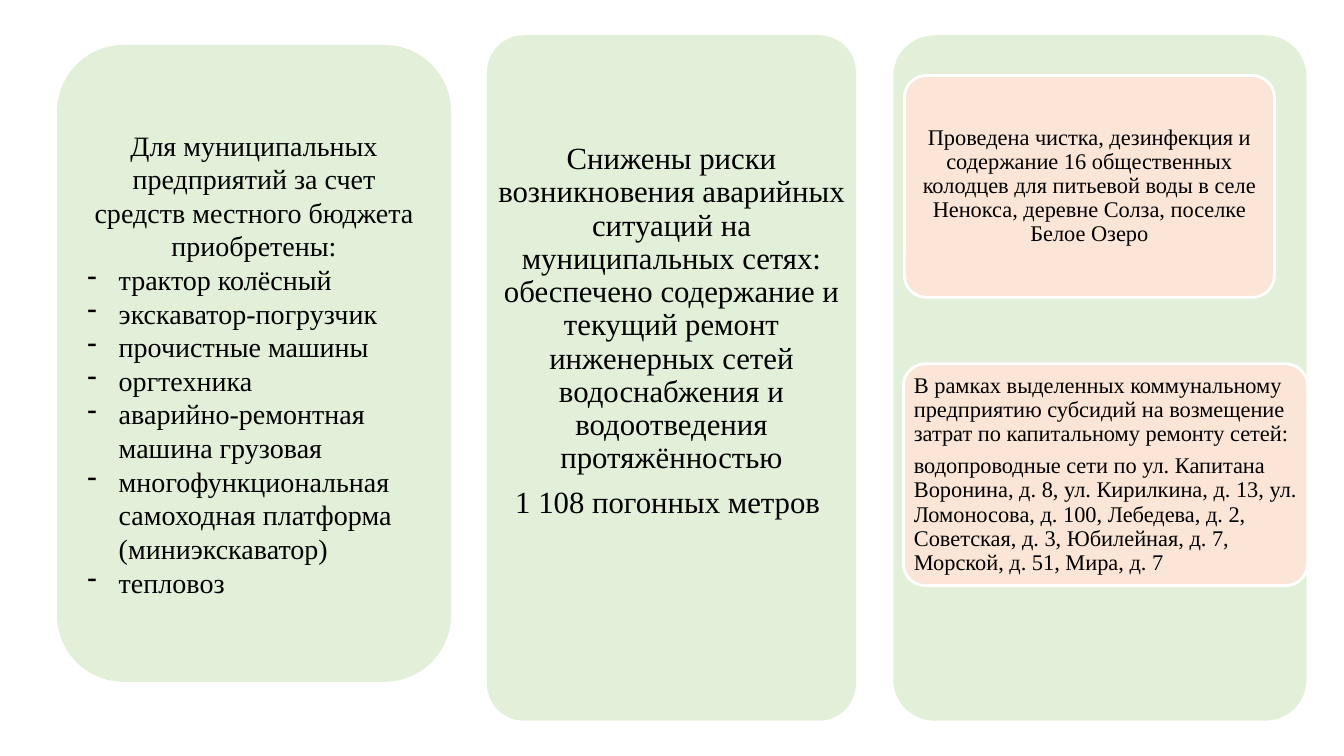
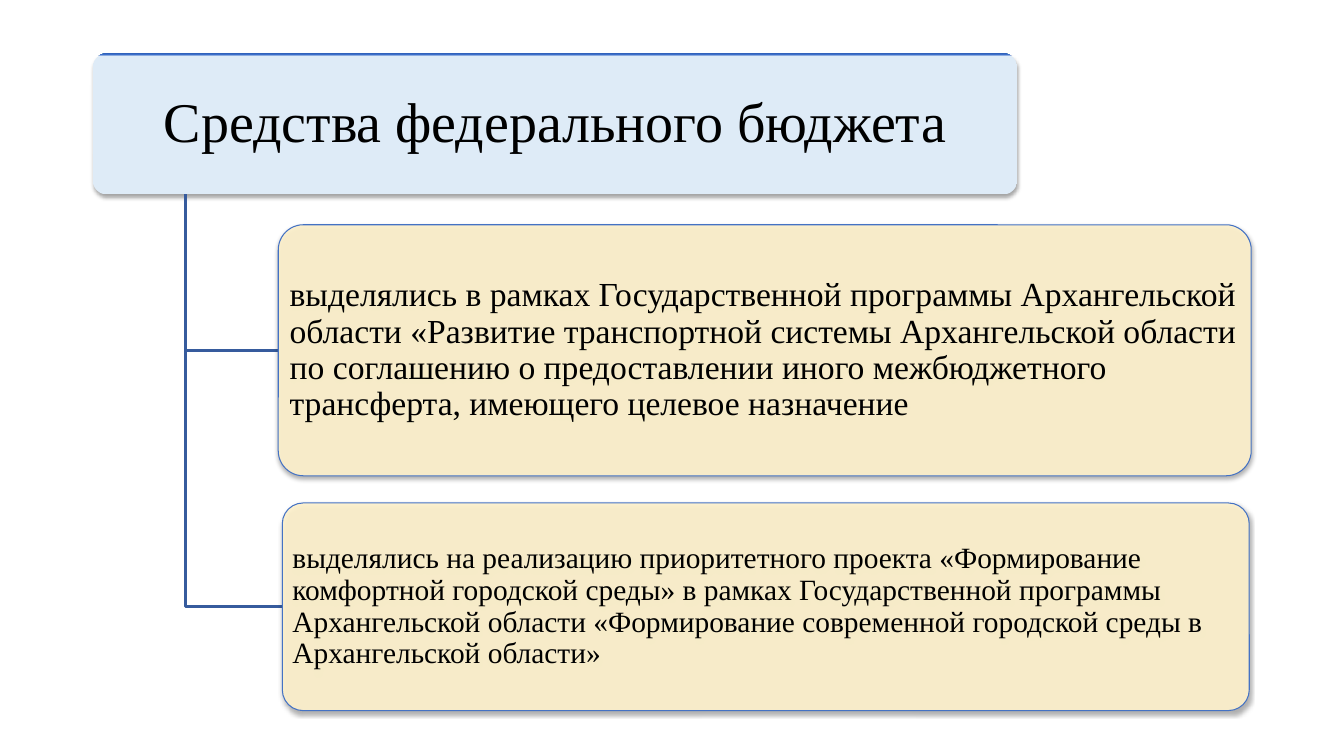
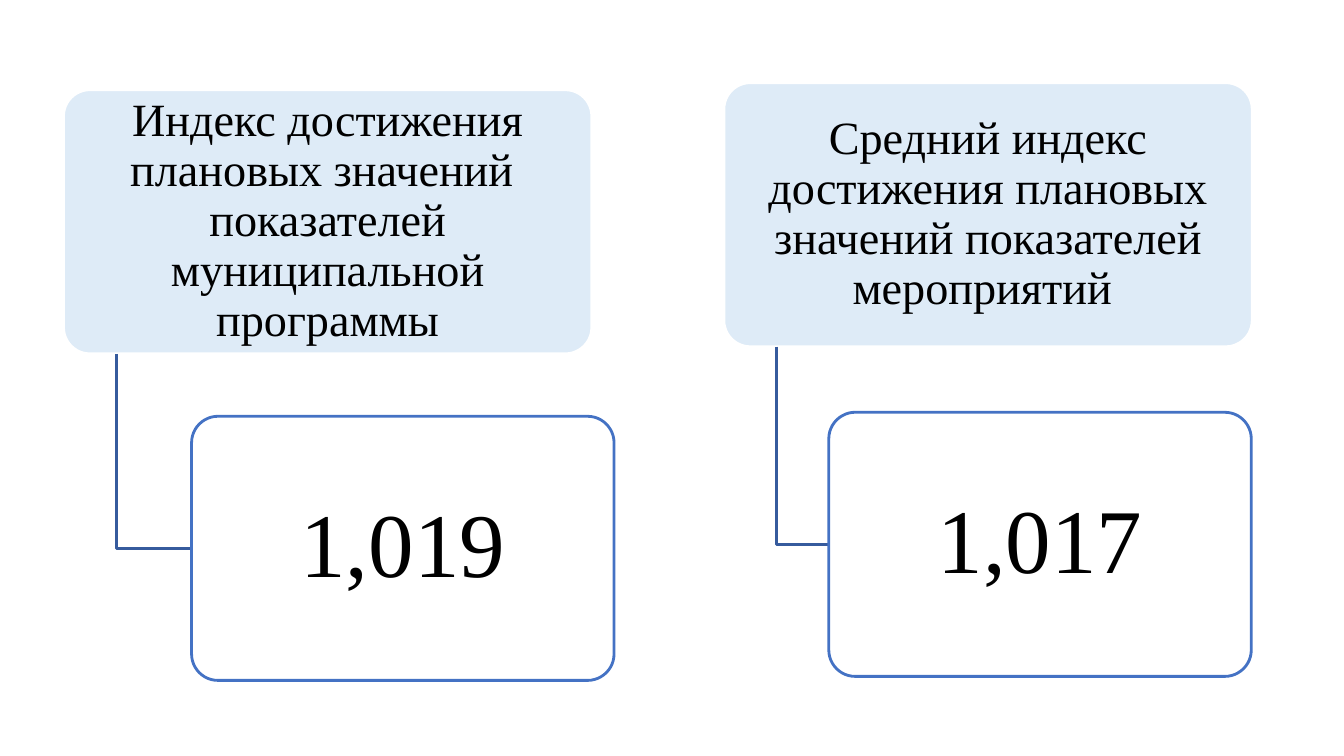
import copy

import pptx
import pptx.dml.color
import pptx.enum.shapes
import pptx.enum.text
import pptx.oxml
import pptx.oxml.ns
import pptx.util
from lxml import etree

PX = 9144  # one px is a hundredth of an inch
FONT = "Times New Roman"
GREEN, PEACH, SKY, CREAM = "E2F0D9", "FBE5D6", "DEEBF7", "FFF2CC"
BLUE, ELBOW, WHITE, BLACK = "4472C4", "365B9D", "FFFFFF", "000000"
LEFT, CENTER = pptx.enum.text.PP_ALIGN.LEFT, pptx.enum.text.PP_ALIGN.CENTER
TOP, MIDDLE = pptx.enum.text.MSO_ANCHOR.TOP, pptx.enum.text.MSO_ANCHOR.MIDDLE


# Basics
def px(*values):
    return [pptx.util.Emu(round(v * PX)) for v in values]


def rgb(value):
    return pptx.dml.color.RGBColor.from_string(value)


def sub(parent, tag, **attrs):
    return etree.SubElement(parent, pptx.oxml.ns.qn(tag), attrs)


def find(shape, tag):
    return shape._element.spPr.find(".//" + pptx.oxml.ns.qn(tag))


def write(shape, paragraphs, size, align=CENTER, inset=(10, 5), anchor=MIDDLE,
          spacing=0.9, after=0.35):
    """Fill a shape with paragraphs; after is a share of the text size."""
    tf = shape.text_frame
    tf.word_wrap = True
    tf.vertical_anchor = anchor
    tf.margin_left, tf.margin_top = px(*inset)
    tf.margin_right, tf.margin_bottom = px(*inset)
    tf.text = "\n".join(paragraphs)
    for i, p in enumerate(tf.paragraphs):
        p.alignment = align
        p.line_spacing = spacing
        p.space_after = pptx.util.Pt(after * size if i < len(paragraphs) - 1 else 0)
        for r in p.runs:
            r.font.name, r.font.size = FONT, pptx.util.Pt(size)
            r.font.color.rgb = rgb(BLACK)
    return tf


def rounded(s, box, fill, line=None, width=2, corner=0.1, alpha=None):
    sp = s.shapes.add_shape(pptx.enum.shapes.MSO_SHAPE.ROUNDED_RECTANGLE, *px(*box))
    sp.adjustments[0] = corner
    sp.shadow.inherit = False
    sp.fill.solid()
    sp.fill.fore_color.rgb = rgb(fill)
    if alpha:
        sub(find(sp, "a:srgbClr"), "a:alpha", val=str(alpha * 1000))
    if line:
        sp.line.color.rgb = rgb(line)
        sp.line.width = pptx.util.Pt(width)
    else:
        sp.line.fill.background()
    return sp


def add_shadow(sp):
    shadow = sub(find(sp, "a:effectLst"), "a:outerShdw", blurRad="40000",
                 dist="23000", dir="5400000", rotWithShape="0")
    sub(sub(shadow, "a:srgbClr", val=BLACK), "a:alpha", val="35000")


def add_top_edge(sp):
    """Shade the fill to blue in a thin strip along the top."""
    sp.fill.gradient()
    sp.fill.gradient_angle = 90
    stops = find(sp, "a:gsLst")
    stops.append(copy.deepcopy(stops[-1]))
    shades = [(0.98, SKY), (0.99, "3E70CA"), (1, "3062BB")]
    for stop, (position, colour) in zip(sp.fill.gradient_stops, shades):
        stop.position = position
        stop.color.rgb = rgb(colour)


# Columns of the first slide
def purchases_column(s, box, intro, items):
    sp = rounded(s, box, GREEN, GREEN, corner=0.16667)
    tf = write(sp, [intro] + items, 20, spacing=1, after=0)
    for p in tf.paragraphs[1:]:
        p.alignment = LEFT
        pPr = p._p.get_or_add_pPr()
        indent = 31 * PX
        pPr.set("marL", str(indent))
        pPr.set("indent", str(-indent))
        sub(pPr, "a:buChar", char="-")


def risks_column(s, box, paragraphs):
    x, y, w, h = box
    rounded(s, box, GREEN)
    tb = s.shapes.add_textbox(*px(x, y + 107, w, 380))
    write(tb, paragraphs, 22, inset=(10, 0), anchor=TOP)


def cards_column(s, box, cards):
    x, y, w, h = box
    rounded(s, box, GREEN)
    for (dx, dy, card_w), align, paragraphs in cards:
        card = rounded(s, (x + dx, y + dy, card_w, 220), PEACH, WHITE)
        write(card, paragraphs, 16, align, inset=(4, 3))


# Header with branches below it
def elbow(s, header, child):
    """Drop from a tenth of the header's width to the child's left side."""
    x, y = header[0] + header[2] / 10, header[1] + header[3]
    end_x, end_y = child[0], child[1] + child[3] / 2
    builder = s.shapes.build_freeform(*px(x, y))
    builder.add_line_segments([px(x, end_y), px(end_x, end_y)], close=False)
    sp = builder.convert_to_shape()
    sp.shadow.inherit = False
    sp.fill.background()
    sp.line.color.rgb = rgb(ELBOW)
    sp.line.width = pptx.util.Pt(2)


def funding_tree(s, header, title, branches):
    sp = rounded(s, header, SKY)
    add_top_edge(sp)
    add_shadow(sp)
    write(sp, [title], 40, inset=(8, 6))
    for box, size, text in branches:
        elbow(s, header, box)
        sp = rounded(s, box, CREAM, BLUE, 0.75, alpha=90)
        add_shadow(sp)
        write(sp, [text], size, LEFT, inset=(4, 3))


def index_tree(s, header, title, child, value):
    write(rounded(s, header, SKY, WHITE), [title], 33, inset=(7, 5))
    elbow(s, header, child)
    write(rounded(s, child, WHITE, BLUE, alpha=90), [value], 65, inset=(14, 9))


# Slides
def results_slide(s):
    purchases_column(
        s, (58, 46, 388, 629),
        "Для муниципальных предприятий за счет средств местного бюджета приобретены:",
        ["трактор колёсный", "экскаватор-погрузчик", "прочистные машины",
         "оргтехника", "аварийно-ремонтная машина грузовая",
         "многофункциональная самоходная платформа (миниэкскаватор)", "тепловоз"])
    risks_column(s, (483, 35, 366, 680), [
        "Снижены риски возникновения аварийных ситуаций на муниципальных сетях: "
        "обеспечено содержание и текущий ремонт инженерных сетей водоснабжения "
        "и водоотведения протяжённостью",
        "1 108 погонных метров "])
    cards_column(s, (886, 35, 410, 680), [
        ((11, 40, 367), CENTER, [
            "Проведена чистка, дезинфекция и содержание 16 общественных колодцев "
            "для питьевой воды в селе Ненокса, деревне Солза, поселке Белое Озеро"]),
        ((10, 326, 401), LEFT, [
            "В рамках выделенных коммунальному предприятию субсидий на возмещение затрат "
            "по капитальному ремонту сетей:",
            "водопроводные сети по ул. Капитана Воронина, д. 8, ул. Кирилкина, "
            "д. 13, ул. Ломоносова, д. 100, Лебедева, д. 2, Советская, д. 3, "
            "Юбилейная, д. 7, Морской, д. 51, Мира, д. 7"])])


def funding_slide(s):
    funding_tree(s, (92, 53, 917, 140), "Средства федерального бюджета", [
        ((276, 223, 965, 249), 24,
         "выделялись в рамках Государственной программы Архангельской области "
         "«Развитие транспортной системы Архангельской области по соглашению "
         "о предоставлении иного межбюджетного трансферта, имеющего целевое "
         "назначение"),
        ((280, 499, 959, 206), 21,
         "выделялись на реализацию приоритетного проекта «Формирование "
         "комфортной городской среды» в рамках Государственной программы "
         "Архангельской области «Формирование современной городской среды "
         "в Архангельской области»")])


def indices_slide(s):
    index_tree(s, (63, 89, 524, 262),
               "Индекс достижения плановых значений  показателей муниципальной программы",
               (190, 413, 419, 262), "1,019")
    index_tree(s, (718, 82, 524, 262),
               "Средний индекс достижения плановых значений показателей мероприятий ",
               (822, 409, 419, 262), "1,017")


def main():
    prs = pptx.Presentation()
    prs.slide_width, prs.slide_height = px(1333, 750)
    for build in (results_slide, funding_slide, indices_slide):
        build(prs.slides.add_slide(prs.slide_layouts[6]))
    prs.save("out.pptx")


if __name__ == "__main__":
    main()
